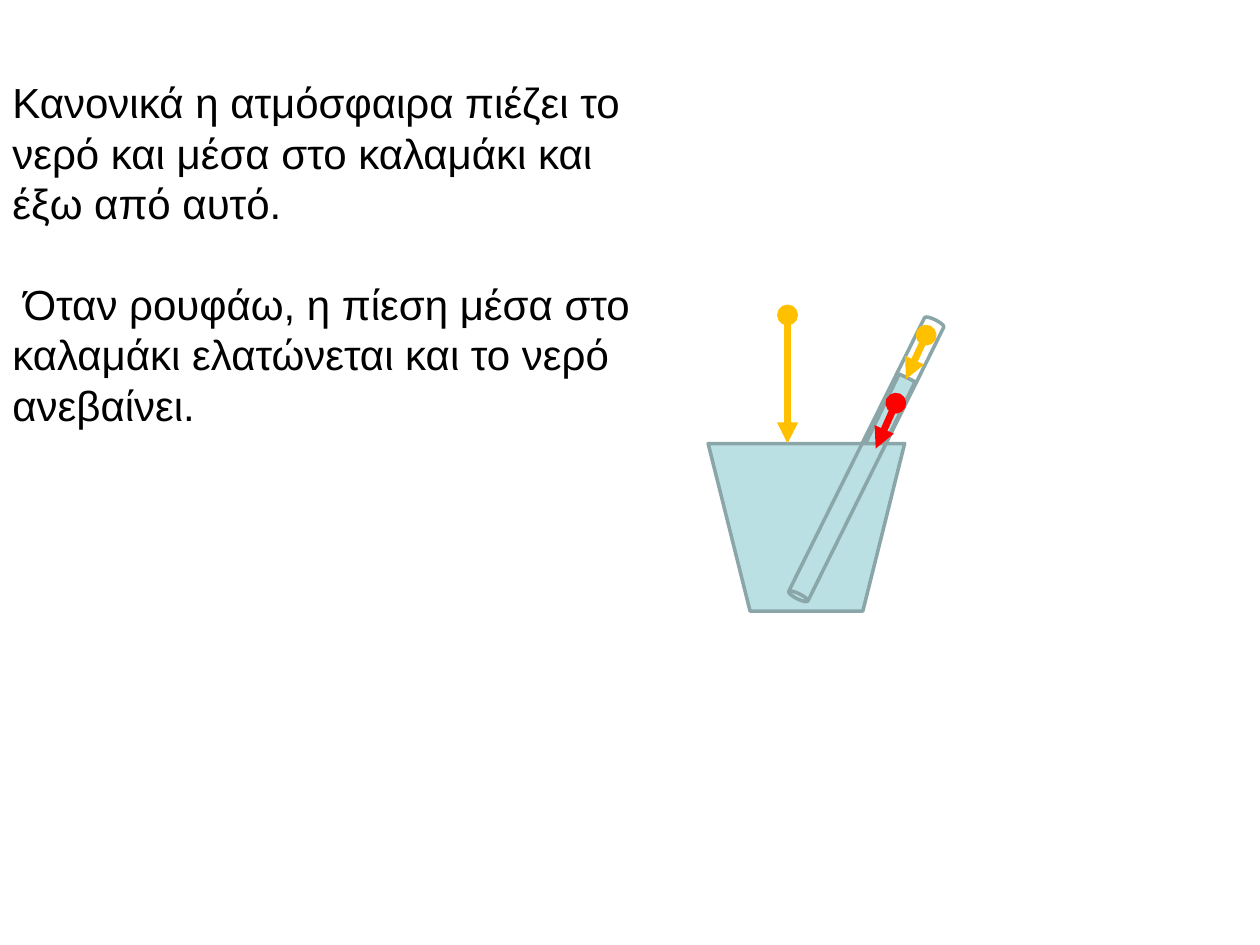
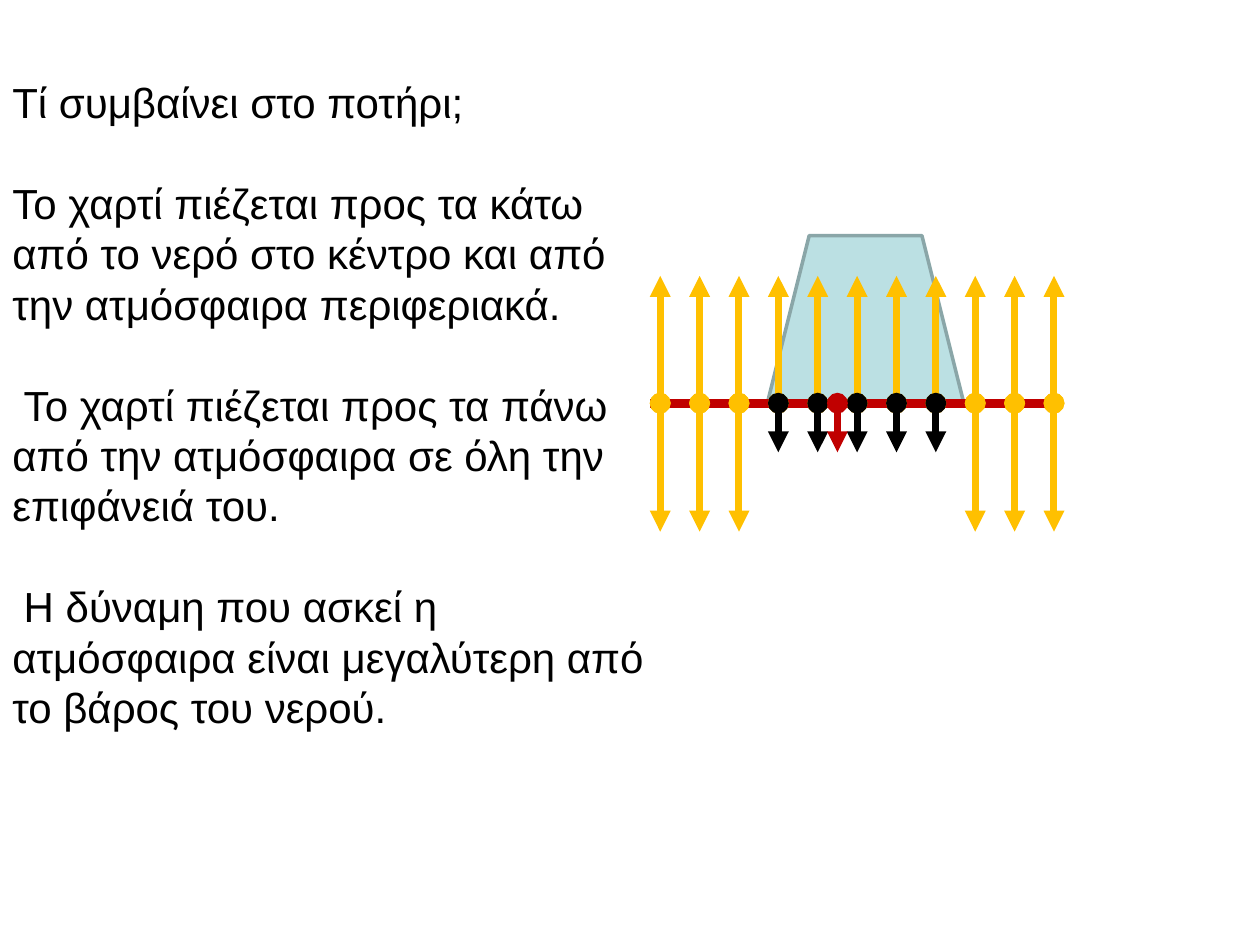
from lxml.etree import SubElement
from pptx import Presentation
from pptx.dml.color import RGBColor
from pptx.enum.shapes import MSO_CONNECTOR, MSO_SHAPE as SHAPE
from pptx.enum.text import MSO_ANCHOR, PP_ALIGN
from pptx.oxml.ns import qn
from pptx.util import Inches, Pt

# Content: (paragraph, slightly indented first line)
STRAW_TEXT = [
    ("Κανονικά η ατμόσφαιρα πιέζει το νερό και μέσα στο καλαμάκι και έξω από αυτό.", False),
    ("Όταν ρουφάω, η πίεση μέσα στο καλαμάκι ελατώνεται και το νερό ανεβαίνει.", True),
]
GLASS_TEXT = [
    ("Tί συμβαίνει στο ποτήρι;", False),
    ("Το χαρτί πιέζεται προς τα κάτω από το νερό στο κέντρο "
     "και από την ατμόσφαιρα περιφεριακά.", False),
    ("Το χαρτί πιέζεται προς τα πάνω από την ατμόσφαιρα σε όλη την επιφάνειά του.", True),
    ("Η δύναμη που ασκεί η ατμόσφαιρα είναι μεγαλύτερη από το βάρος του νερού.", True),
]

# Shared style
COLORS = {"water": "BBE0E3", "edge": "8AA6A8", "air": "FFC000", "suction": "FF0000",
          "paper": "C00000", "weight": "000000", "text": "000000"}
FONT, SIZE, LEADING = "Arial", 24, 28.8
TEXT_BOX = (0, 0.56, 5.23)
GLASS = (1.56, 1.33)

# Pressure arrows on the paper: equal columns
PAPER_Y, FIRST_X, PITCH, COLUMNS = 3.2, 5.24, 0.3125, 11
UNDER_GLASS = range(3, 8)
UP, DOWN, WEIGHT = -1.01, 1.02, 0.39


def rgb(name):
    return RGBColor.from_string(COLORS[name])


def add_text(s, paragraphs, height, size=SIZE, color="text", leading=LEADING):
    left, top, width = TEXT_BOX
    box = s.shapes.add_textbox(Inches(left), Inches(top), Inches(width), Inches(height))
    tf = box.text_frame
    tf.word_wrap = True
    tf.vertical_anchor = MSO_ANCHOR.TOP
    for i, (text, indented) in enumerate(paragraphs):
        p = tf.paragraphs[0] if i == 0 else tf.add_paragraph()
        p.alignment = PP_ALIGN.LEFT
        p.line_spacing = Pt(leading)
        p.space_before = Pt(leading if i else 0)
        if indented:
            p._p.get_or_add_pPr().set("indent", str(Inches(0.09)))
        r = p.add_run()
        r.text = text
        r.font.name, r.font.size = FONT, Pt(size)
        r.font.color.rgb = rgb(color)


def add_part(s, kind, left, top, width, height, rotation=0, fill="water"):
    sp = s.shapes.add_shape(kind, *map(Inches, (left, top, width, height)))
    sp.shadow.inherit = False
    sp.rotation = rotation
    if fill:
        sp.fill.solid()
        sp.fill.fore_color.rgb = rgb(fill)
    else:
        sp.fill.background()
    sp.line.color.rgb = rgb("edge")
    sp.line.width = Pt(2)


def add_line(s, start, end, color, width=4, arrow=True):
    line = s.shapes.add_connector(MSO_CONNECTOR.STRAIGHT, *map(Inches, (*start, *end)))
    line.line.color.rgb = rgb(color)
    line.line.width = Pt(width)
    if arrow:
        ln = line.line._get_or_add_ln()
        SubElement(ln, qn("a:headEnd"), type="oval")
        SubElement(ln, qn("a:tailEnd"), type="triangle")
    SubElement(line._element.spPr, qn("a:effectLst"))


def straw_slide(s):
    # Water in the straw, glass, straw
    add_part(s, SHAPE.RECTANGLE, 6.96, 2.96, 0.14, 0.78, 25.8)
    add_part(s, SHAPE.TRAPEZOID, 5.62, 3.52, *GLASS, rotation=180)
    add_part(s, SHAPE.CAN, 6.79, 2.41, 0.17, 2.47, 206.4, fill=None)
    # Pressures
    add_line(s, (6.25, 2.5), (6.25, 3.52), "air")
    add_line(s, (7.35, 2.66), (7.19, 3.01), "air")
    add_line(s, (7.11, 3.2), (6.95, 3.56), "suction")
    add_text(s, STRAW_TEXT, 3.34)


def glass_slide(s):
    def press(column, length, color):
        x = FIRST_X + column * PITCH
        add_line(s, (x, PAPER_Y), (x, PAPER_Y + length), color)

    # Upturned glass on the paper
    add_part(s, SHAPE.TRAPEZOID, 6.09, PAPER_Y - GLASS[1], *GLASS)
    add_line(s, (5.16, PAPER_Y), (8.44, PAPER_Y), "paper", width=5, arrow=False)
    # Air pushes up everywhere, and down only outside the glass
    for column in range(COLUMNS):
        press(column, UP, "air")
        if column in UNDER_GLASS:
            press(column, WEIGHT, "weight")
        else:
            press(column, DOWN, "air")
    add_text(s, GLASS_TEXT, 5.36)
    # Weight of the paper
    press(4.5, WEIGHT, "paper")


def main():
    prs = Presentation()
    prs.slide_width, prs.slide_height = Inches(10), Inches(7.5)
    for build in (straw_slide, glass_slide):
        build(prs.slides.add_slide(prs.slide_layouts[6]))
    prs.save("out.pptx")


if __name__ == "__main__":
    main()
